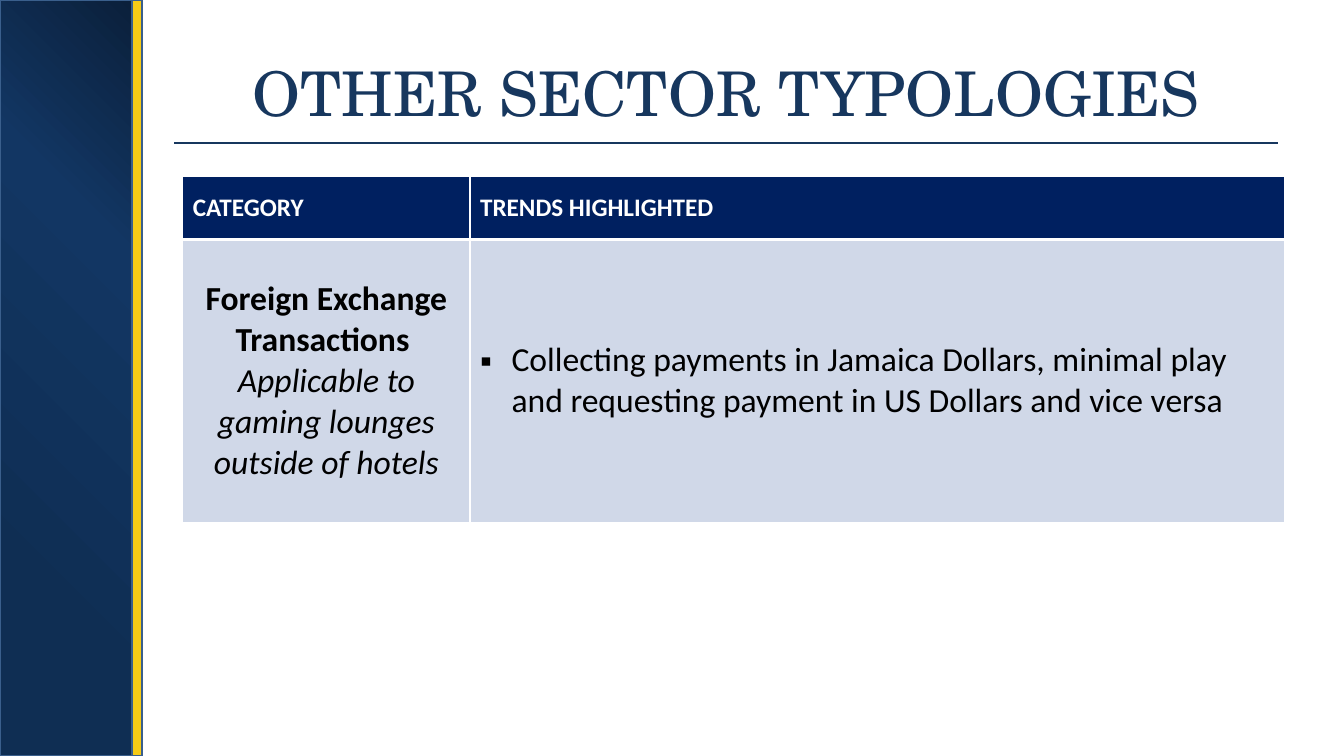
import lxml.etree
import pptx
import pptx.dml.color
import pptx.enum.shapes
import pptx.enum.text
import pptx.oxml
import pptx.oxml.ns
import pptx.util

Pt = pptx.util.Pt
RGBColor = pptx.dml.color.RGBColor
CENTER = pptx.enum.text.PP_ALIGN.CENTER
MIDDLE = pptx.enum.text.MSO_ANCHOR.MIDDLE

WHITE = RGBColor(0xFF, 0xFF, 0xFF)
BLACK = RGBColor(0, 0, 0)
NAVY = RGBColor(0x17, 0x37, 0x5E)
HEADER_BLUE = RGBColor(0x00, 0x20, 0x60)
BODY_BLUE = RGBColor(0xD0, 0xD8, 0xE8)
YELLOW = RGBColor(0xF6, 0xCB, 0x16)
BAND_OUTLINE = RGBColor(0x3A, 0x5F, 0x8C)
BAND_STOPS = [
    (0, RGBColor(0x0B, 0x20, 0x3B)),
    (29, RGBColor(0x12, 0x36, 0x63)),
    (79, RGBColor(0x0F, 0x2E, 0x53)),
]

SLIDE_WIDTH, SLIDE_HEIGHT = 960, 540
BAND_WIDTH, STRIPE_WIDTH = 94.3, 7.2
TITLE_LEFT, TITLE_WIDTH = 124.6, 788.4

TITLE_FORMAT = {"name": "TeX Gyre Schola", "size": Pt(44), "bold": False}
HEADER_FORMAT = {"name": "Calibri", "size": Pt(18), "bold": True}
CATEGORY_FORMAT = {"name": "Calibri", "size": Pt(24), "bold": True}
NOTE_FORMAT = {"name": "Calibri", "size": Pt(24), "bold": False, "italic": True}
TREND_FORMAT = {"name": "Calibri", "size": Pt(24), "bold": False}


def parse_drawing(text):
    """Parse an element with attributes, declaring its namespace before them."""
    return pptx.oxml.parse_xml(text.replace(" ", f" {pptx.oxml.ns.nsdecls('a')} ", 1))


def apply_format(font, format_values, color):
    for name, value in format_values.items():
        setattr(font, name, value)
    font.color.rgb = color


def add_bar(slide, left, width):
    bar = slide.shapes.add_shape(
        pptx.enum.shapes.MSO_SHAPE.RECTANGLE, Pt(left), 0, Pt(width), Pt(SLIDE_HEIGHT)
    )
    bar.shadow.inherit = False
    bar.line.color.rgb = BAND_OUTLINE
    bar.line.width = Pt(2)
    return bar


def fill_from_top_right(shape, stops):
    """Give the shape a circular gradient centred on its top right corner."""
    shape.fill.gradient()
    gradient = shape.element.spPr.find(pptx.oxml.ns.qn("a:gradFill"))
    stop_xml = "".join(
        f'<a:gs pos="{position * 1000}"><a:srgbClr val="{color}"/></a:gs>'
        for position, color in stops
    )
    gradient.getparent().replace(gradient, parse_drawing(
        f'<a:gradFill rotWithShape="1"><a:gsLst>{stop_xml}</a:gsLst>'
        '<a:path path="circle"><a:fillToRect l="100000" b="100000"/></a:path></a:gradFill>'
    ))


def set_title(slide, text):
    title = slide.shapes.title
    title.left, title.top = Pt(TITLE_LEFT), Pt(20.9)
    title.width, title.height = Pt(TITLE_WIDTH), Pt(90)
    frame = title.text_frame
    frame.text = text
    frame.auto_size = pptx.enum.text.MSO_AUTO_SIZE.NONE
    frame.vertical_anchor = MIDDLE
    frame.paragraphs[0].alignment = CENTER
    apply_format(frame.paragraphs[0].runs[0].font, TITLE_FORMAT, NAVY)


def add_rule(slide, left, top, width):
    rule = slide.shapes.add_connector(
        pptx.enum.shapes.MSO_CONNECTOR.STRAIGHT, Pt(left), Pt(top), Pt(left + width), Pt(top)
    )
    rule.line.color.rgb = NAVY
    rule.line.width = Pt(1.5)
    lxml.etree.SubElement(rule.element.spPr, pptx.oxml.ns.qn("a:effectLst"))


def add_table(slide, left, top, column_widths, row_heights):
    frame = slide.shapes.add_table(
        len(row_heights), len(column_widths), Pt(left), Pt(top),
        Pt(sum(column_widths)), Pt(sum(row_heights)),
    )
    table = frame.table
    table.horz_banding = False
    for column, width in zip(table.columns, column_widths):
        column.width = Pt(width)
    for row, height in zip(table.rows, row_heights):
        row.height = Pt(height)
    return table


def style_cell(cell, fill, top_border, bottom_border):
    properties = cell._tc.get_or_add_tcPr()
    for side, width in {"L": 1, "R": 1, "T": top_border, "B": bottom_border}.items():
        properties.append(parse_drawing(
            f'<a:ln{side} w="{int(Pt(width))}"><a:solidFill><a:srgbClr val="{WHITE}"/>'
            f"</a:solidFill></a:ln{side}>"
        ))
    cell.fill.solid()
    cell.fill.fore_color.rgb = fill
    cell.vertical_anchor = MIDDLE


def write_cell(cell, lines, color, alignment=None):
    """Write one paragraph for each pair of text and format values."""
    cell.text = "\n".join(text for text, _ in lines)
    for paragraph, (_, format_values) in zip(cell.text_frame.paragraphs, lines):
        paragraph.alignment = alignment
        apply_format(paragraph.runs[0].font, format_values, color)


def add_bullet(paragraph):
    properties = paragraph._p.get_or_add_pPr()
    properties.set("marL", str(int(Pt(22.5))))
    properties.set("indent", str(-int(Pt(22.5))))
    paragraph.space_after = Pt(6)
    properties.append(parse_drawing('<a:buFont typeface="Arial"/>'))
    properties.append(parse_drawing('<a:buChar char="▪"/>'))


def add_typologies(slide):
    table = add_table(slide, 130.5, 126, [205.2, 582], [45, 202.3])
    for column, heading in enumerate(["CATEGORY", "TRENDS HIGHLIGHTED"]):
        style_cell(table.cell(0, column), HEADER_BLUE, 1, 3)
        write_cell(table.cell(0, column), [(heading, HEADER_FORMAT)], WHITE)
        style_cell(table.cell(1, column), BODY_BLUE, 3, 1)
    write_cell(table.cell(1, 0), [
        ("Foreign Exchange Transactions ", CATEGORY_FORMAT),
        ("Applicable to gaming lounges outside of hotels", NOTE_FORMAT),
    ], BLACK, CENTER)
    trend = table.cell(1, 1)
    write_cell(trend, [(
        "Collecting payments in Jamaica Dollars, minimal play and requesting "
        "payment in US Dollars and vice versa", TREND_FORMAT,
    )], BLACK)
    add_bullet(trend.text_frame.paragraphs[0])


def main():
    presentation = pptx.Presentation()
    presentation.slide_width = Pt(SLIDE_WIDTH)
    presentation.slide_height = Pt(SLIDE_HEIGHT)
    slide = presentation.slides.add_slide(presentation.slide_layouts[5])
    fill_from_top_right(add_bar(slide, 0, BAND_WIDTH), BAND_STOPS)
    stripe = add_bar(slide, BAND_WIDTH, STRIPE_WIDTH)
    stripe.fill.solid()
    stripe.fill.fore_color.rgb = YELLOW
    set_title(slide, "OTHER SECTOR TYPOLOGIES")
    add_typologies(slide)
    add_rule(slide, TITLE_LEFT, 102.2, TITLE_WIDTH)
    presentation.save("out.pptx")


if __name__ == "__main__":
    main()
